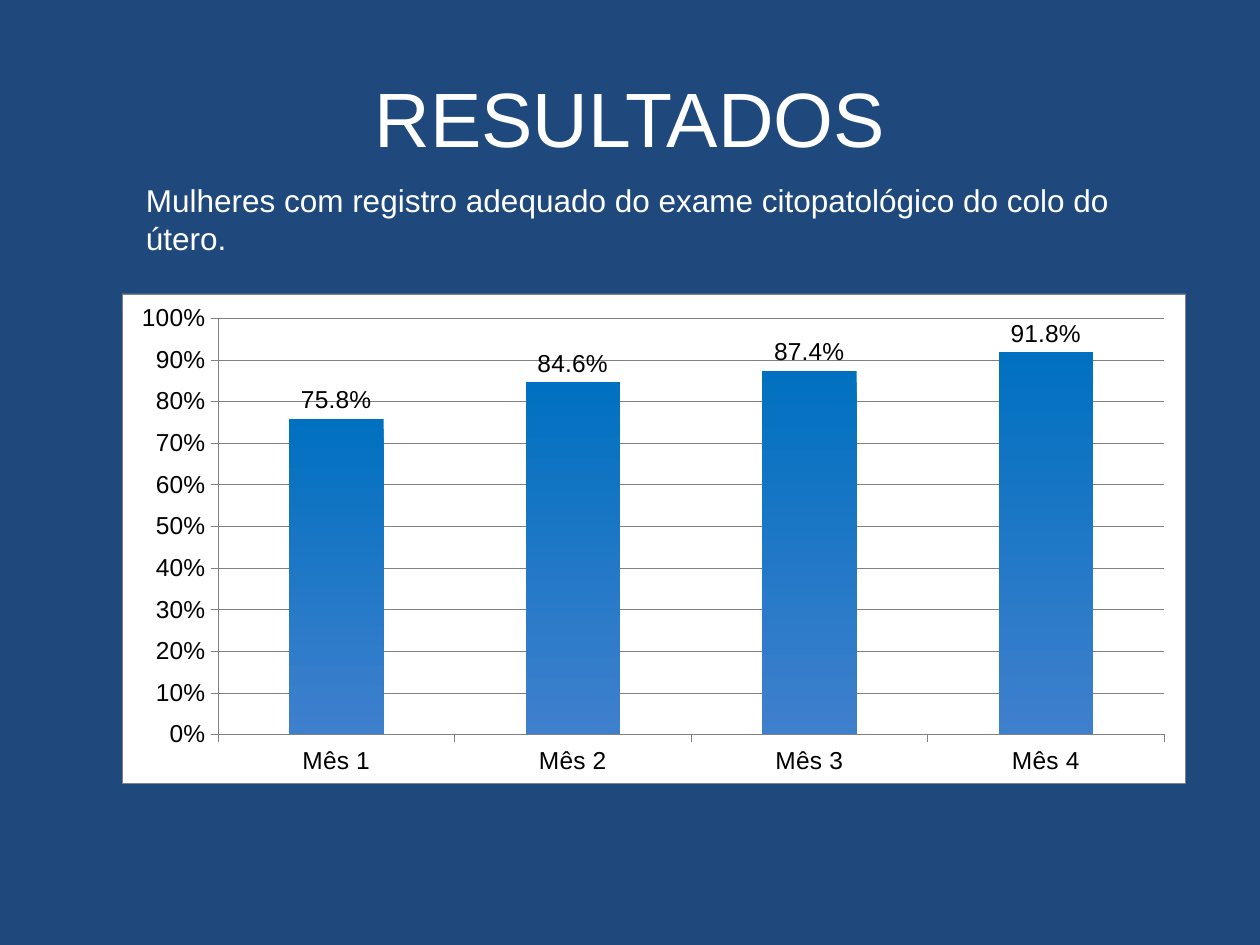
from dataclasses import dataclass

from lxml import etree
from pptx import Presentation
from pptx.chart.chart import Chart
from pptx.chart.data import CategoryChartData
from pptx.dml.color import RGBColor
from pptx.enum.chart import XL_CHART_TYPE, XL_LABEL_POSITION, XL_TICK_MARK
from pptx.enum.text import MSO_ANCHOR, PP_ALIGN
from pptx.oxml import parse_xml
from pptx.oxml.ns import nsdecls, qn
from pptx.util import Inches, Pt

COLUMNS = XL_CHART_TYPE.COLUMN_CLUSTERED
LABELS_ABOVE = XL_LABEL_POSITION.OUTSIDE_END
TICK_OUTSIDE = XL_TICK_MARK.OUTSIDE
TOP = MSO_ANCHOR.TOP
MIDDLE = MSO_ANCHOR.MIDDLE
LEFT = PP_ALIGN.LEFT
CENTER = PP_ALIGN.CENTER

FONT = "Arial"
NAVY = "1F497D"
WHITE = "FFFFFF"
BLACK = "000000"
GRAY = "808080"
BAR_COLORS = ("0070C0", "3F80CD")
HAIRLINE = Pt(0.25)


@dataclass
class Heading:
    wording: str
    box: tuple[float, float, float, float]
    size: int
    align: PP_ALIGN
    anchor: MSO_ANCHOR


@dataclass
class MonthlyRate:
    month: str
    rate: float


HEADINGS = [
    Heading("RESULTADOS", (0.5, 0.3, 9, 1.25), 44, CENTER, MIDDLE),
    Heading(
        "Mulheres com registro adequado do exame citopatológico do colo do útero.",
        (1.06, 1.39, 8.27, 0.71), 18, LEFT, TOP,
    ),
]
RATES = [
    MonthlyRate("Mês 1", 0.758),
    MonthlyRate("Mês 2", 0.846),
    MonthlyRate("Mês 3", 0.874),
    MonthlyRate("Mês 4", 0.918),
]
CHART_BOX = (0.97, 2.33, 8.44, 3.89)
PLOT_LAYOUT = {"x": 0.09, "y": 0.05, "w": 0.89, "h": 0.85}


def color(value: str) -> RGBColor:
    return RGBColor.from_string(value)


def add_heading(slide, heading: Heading) -> None:
    box = slide.shapes.add_textbox(*map(Inches, heading.box))
    frame = box.text_frame
    frame.word_wrap = True
    frame.vertical_anchor = heading.anchor
    paragraph = frame.paragraphs[0]
    paragraph.text = heading.wording
    paragraph.alignment = heading.align
    paragraph.font.name = FONT
    paragraph.font.size = Pt(heading.size)
    paragraph.font.color.rgb = color(WHITE)


def area_format(outline: str) -> etree._Element:
    return parse_xml(
        f'<c:spPr {nsdecls("c", "a")}><a:solidFill><a:srgbClr val="{WHITE}"/>'
        f"</a:solidFill>{outline}</c:spPr>"
    )


def format_areas(chart: Chart) -> None:
    border = (
        f'<a:ln w="{HAIRLINE}"><a:solidFill><a:srgbClr val="{GRAY}"/>'
        "</a:solidFill></a:ln>"
    )
    chart_part = chart.element.find(qn("c:chart"))
    chart_part.addnext(area_format(border))
    plot_area = chart_part.find(qn("c:plotArea"))
    plot_area.append(area_format("<a:ln><a:noFill/></a:ln>"))
    for layout in plot_area.findall(qn("c:layout")):
        plot_area.remove(layout)
    extents = "".join(
        f'<c:{side} val="{share}"/>' for side, share in PLOT_LAYOUT.items()
    )
    plot_area.insert(0, parse_xml(
        f'<c:layout {nsdecls("c")}><c:manualLayout>'
        '<c:layoutTarget val="inner"/><c:xMode val="edge"/><c:yMode val="edge"/>'
        f"{extents}</c:manualLayout></c:layout>"
    ))


def format_line(line) -> None:
    line.color.rgb = color(GRAY)
    line.width = HAIRLINE


def format_axes(chart: Chart) -> None:
    for axis in (chart.category_axis, chart.value_axis):
        axis.major_tick_mark = TICK_OUTSIDE
        format_line(axis.format.line)
    rate_axis = chart.value_axis
    rate_axis.minimum_scale = 0
    rate_axis.maximum_scale = 1
    rate_axis.major_unit = 0.1
    rate_axis.has_major_gridlines = True
    format_line(rate_axis.major_gridlines.format.line)
    rate_axis.tick_labels.number_format = "0%"
    rate_axis.tick_labels.number_format_is_linked = False


def format_bars(chart: Chart) -> None:
    plot = chart.plots[0]
    plot.gap_width = 150
    plot.vary_by_categories = False
    bars = plot.series[0]
    bars.format.line.fill.background()
    fill = bars.format.fill
    fill.gradient()
    fill.gradient_angle = 270
    for stop, shade in zip(fill.gradient_stops, BAR_COLORS):
        stop.color.rgb = color(shade)
    labels = bars.data_labels
    labels.show_value = True
    labels.number_format = "0.0%"
    labels.number_format_is_linked = False
    labels.position = LABELS_ABOVE


def add_rate_chart(slide, rates: list[MonthlyRate]) -> None:
    chart_data = CategoryChartData(number_format="0.0%")
    chart_data.categories = [entry.month for entry in rates]
    chart_data.add_series("Series 1", [entry.rate for entry in rates])
    frame = slide.shapes.add_chart(COLUMNS, *map(Inches, CHART_BOX), chart_data)
    chart = frame.chart
    chart.has_title = False
    chart.has_legend = False
    chart.font.name = FONT
    chart.font.size = Pt(14)
    chart.font.color.rgb = color(BLACK)
    format_areas(chart)
    format_axes(chart)
    format_bars(chart)


def main() -> None:
    presentation = Presentation()
    presentation.slide_width = Inches(10)
    presentation.slide_height = Inches(7.5)
    slide = presentation.slides.add_slide(presentation.slide_layouts[6])
    background = slide.background.fill
    background.solid()
    background.fore_color.rgb = color(NAVY)
    title, subtitle = HEADINGS
    add_heading(slide, title)
    add_rate_chart(slide, RATES)
    add_heading(slide, subtitle)
    presentation.save("out.pptx")


if __name__ == "__main__":
    main()
